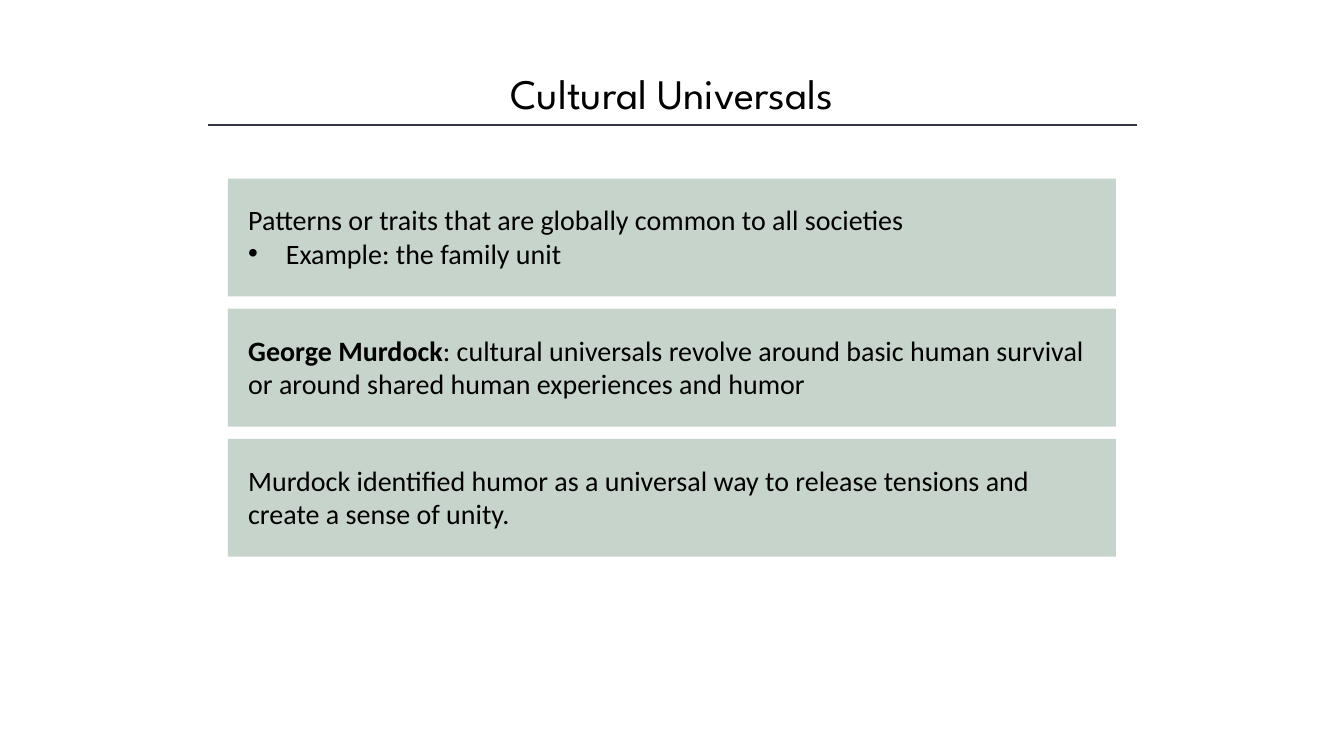
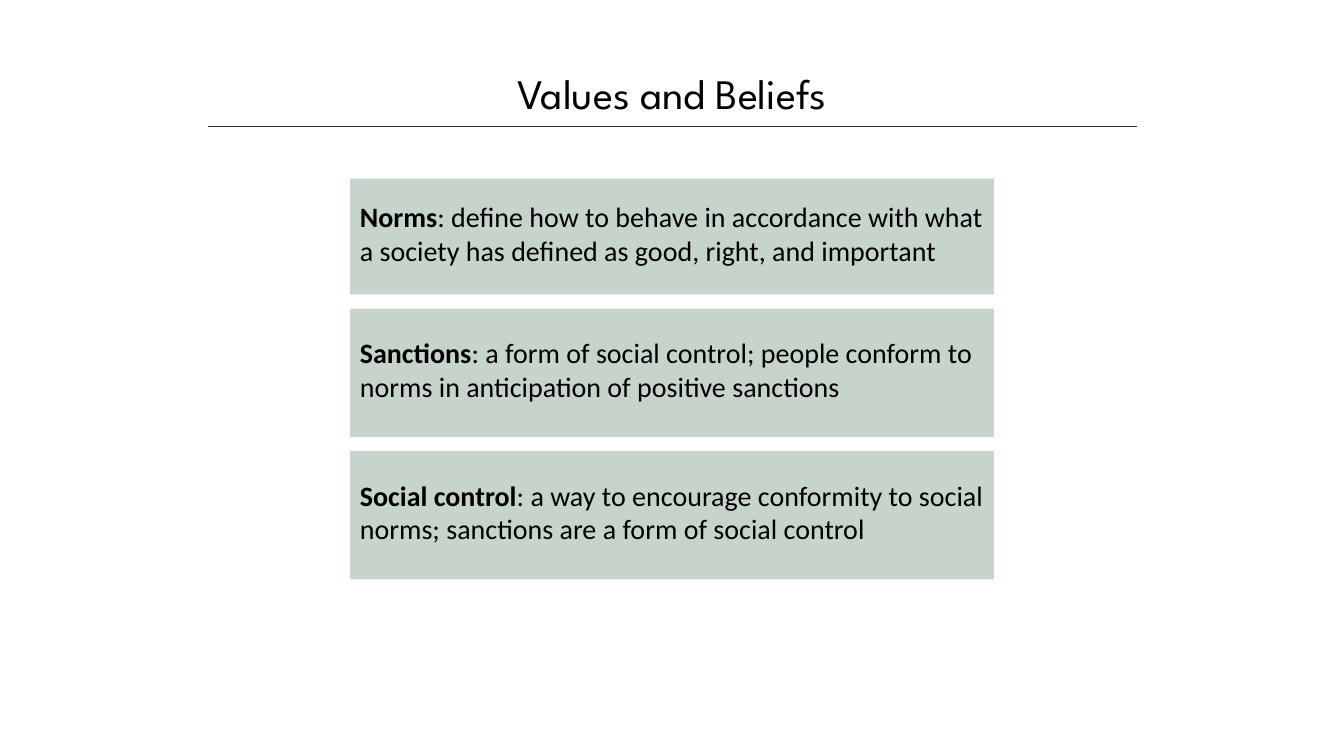
"""Build two sociology slides with a ruled title and stacked text panels."""
from lxml import etree
from pptx import Presentation
from pptx.dml.color import RGBColor
from pptx.enum.shapes import MSO_CONNECTOR, MSO_SHAPE
from pptx.enum.text import MSO_ANCHOR, MSO_AUTO_SIZE, PP_ALIGN
from pptx.oxml.ns import qn
from pptx.util import Cm, Pt

RECT = MSO_SHAPE.RECTANGLE
LINE = MSO_CONNECTOR.STRAIGHT
TOP, MID = MSO_ANCHOR.TOP, MSO_ANCHOR.MIDDLE
LEFT, MIDDLE = PP_ALIGN.LEFT, PP_ALIGN.CENTER
FIXED = MSO_AUTO_SIZE.NONE
BLACK = RGBColor(0x00, 0x00, 0x00)
SAGE = RGBColor(0xC7, 0xD4, 0xCB)
SLATE = RGBColor(0x32, 0x35, 0x42)

WIDE, HIGH = 33.87, 19.05
START = 4.5
HEAD = {"name": "League Spartan", "size": Pt(30), "bold": False}
BODY = {"name": "Calibri", "size": Pt(20)}
PLACE = {"left": Cm(4.24), "top": Cm(1.57), "width": Cm(25.4), "height": Cm(1.55)}
FRAME = {"word_wrap": True, "auto_size": FIXED}

SLIDES = [
    {
        "title": "Cultural Universals",
        "rule": 3.15, "wide": 22.38, "gap": 0.31, "highs": (2.97, 2.97, 2.97),
        "pads": (0.51, 0.13, 0.67, 0.18),
        "panels": [
            ("", "Patterns or traits that are globally common to all societies",
             "Example: the family unit"),
            ("George Murdock", ": cultural universals revolve around basic human "
             "survival or around shared human experiences and humor", ""),
            ("", "Murdock identified humor as a universal way to release tensions "
             "and create a sense of unity.", ""),
        ],
    },
    {
        "title": "Values and Beliefs",
        "rule": 3.18, "wide": 16.23, "gap": 0.36, "highs": (2.92, 3.23, 3.23),
        "pads": (0.25, 0.13, 0.25, 0.3),
        "panels": [
            ("Norms", ": define how to behave in accordance with what a society "
             "has defined as good, right, and important", ""),
            ("Sanctions", ": a form of social control; people conform to norms "
             "in anticipation of positive sanctions", ""),
            ("Social control", ": a way to encourage conformity to social norms; "
             "sanctions are a form of social control", ""),
        ],
    },
]


def style(item, values):
    for key, value in values.items():
        setattr(item, key, value)


def add_run(para, text, look, bold=False):
    run = para.add_run()
    run.text = text
    style(run.font, {**look, "bold": bold})
    run.font.color.rgb = BLACK


def add_head(slide, text, rule):
    title = slide.shapes.title
    style(title, PLACE)
    style(title.text_frame, {**FRAME, "vertical_anchor": TOP})
    para = title.text_frame.paragraphs[0]
    para.alignment = MIDDLE
    add_run(para, text, HEAD)
    line = slide.shapes.add_connector(LINE, Cm(5.23), Cm(rule), Cm(28.65), Cm(rule))
    line.line.color.rgb = SLATE
    line.line.width = Pt(1)
    etree.SubElement(line._element.spPr, qn("a:effectLst"))


def add_bullet(para):
    props = para._p.get_or_add_pPr()
    props.set("marL", str(Cm(0.95)))
    props.set("indent", str(-Cm(0.95)))
    etree.SubElement(props, qn("a:buFont")).set("typeface", "Arial")
    etree.SubElement(props, qn("a:buChar")).set("char", "•")


def add_panel(slide, box, pads, panel):
    shape = slide.shapes.add_shape(RECT, *map(Cm, box))
    shape.shadow.inherit = False
    shape.fill.solid()
    shape.fill.fore_color.rgb = SAGE
    shape.line.fill.background()
    frame = shape.text_frame
    names = ("margin_left", "margin_top", "margin_right", "margin_bottom")
    style(frame, {**FRAME, "vertical_anchor": MID, **dict(zip(names, map(Cm, pads)))})
    term, text, point = panel
    para = frame.paragraphs[0]
    para.alignment = LEFT
    if term:
        add_run(para, term, BODY, True)
    add_run(para, text, BODY)
    if point:
        para = frame.add_paragraph()
        para.alignment = LEFT
        add_bullet(para)
        add_run(para, point, BODY)


def main():
    deck = Presentation()
    deck.slide_width, deck.slide_height = Cm(WIDE), Cm(HIGH)
    for data in SLIDES:
        slide = deck.slides.add_slide(deck.slide_layouts[5])
        add_head(slide, data["title"], data["rule"])
        left, top = (WIDE - data["wide"]) / 2, START
        for high, panel in zip(data["highs"], data["panels"]):
            add_panel(slide, (left, top, data["wide"], high), data["pads"], panel)
            top += high + data["gap"]
    deck.save("out.pptx")


if __name__ == "__main__":
    main()
